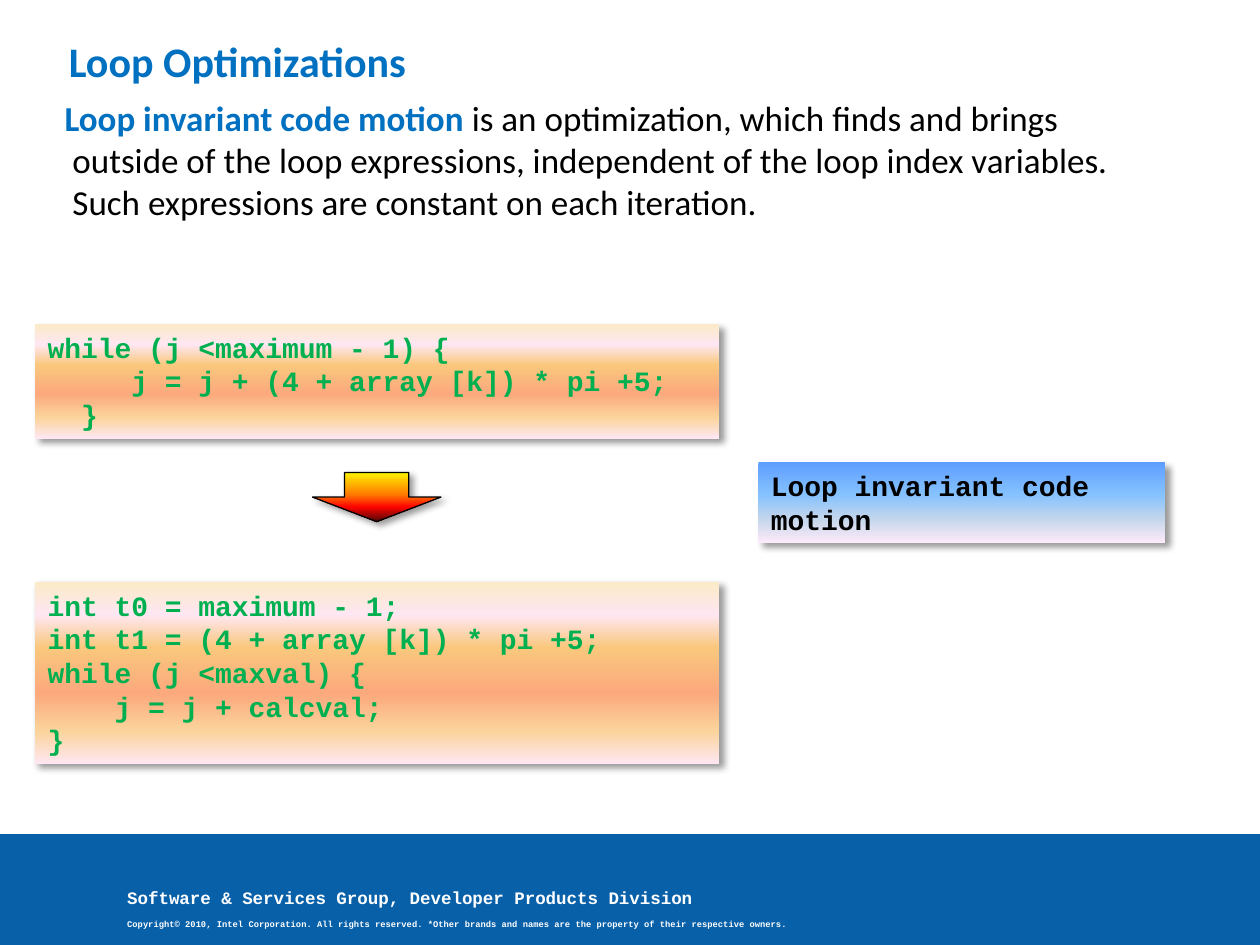
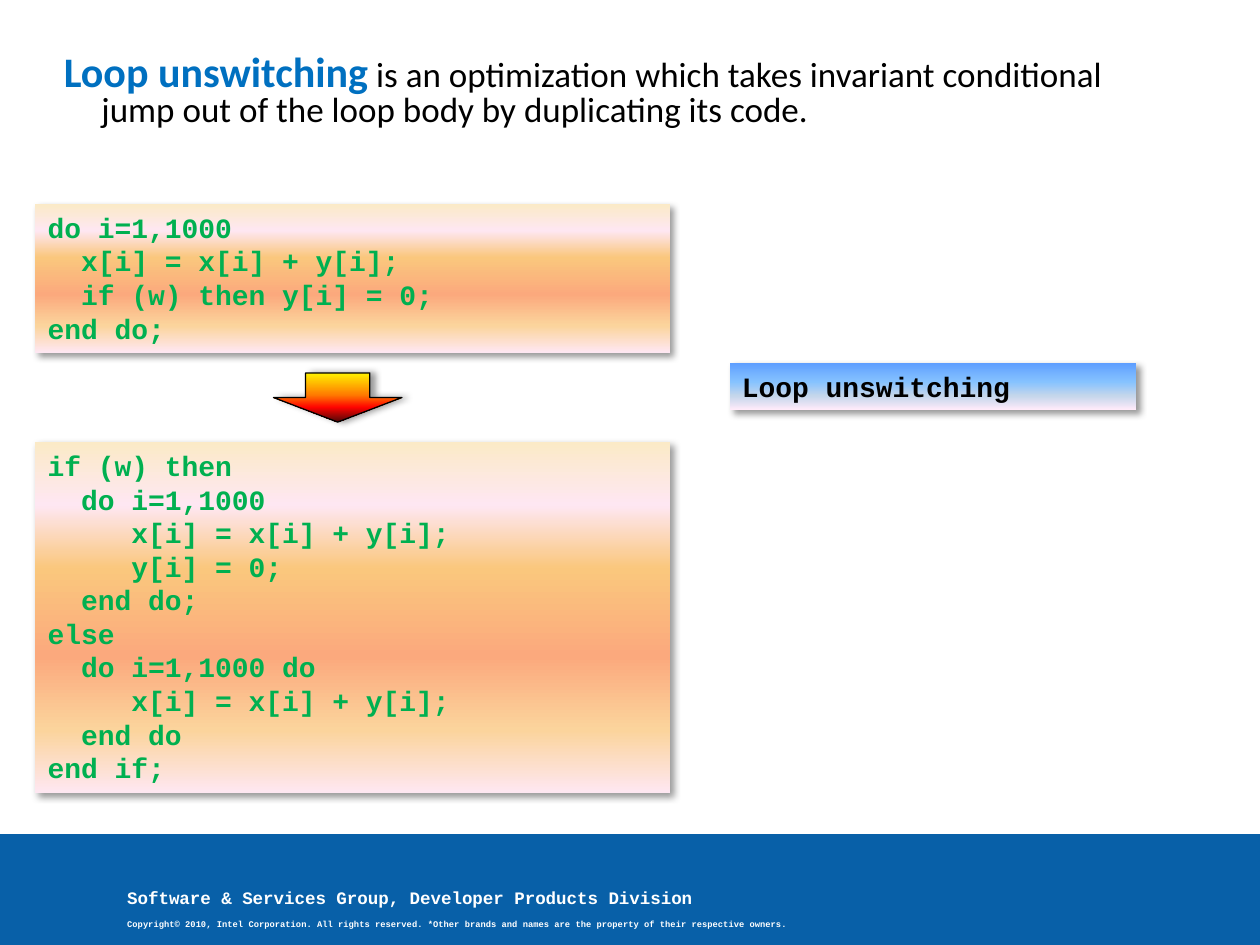
"""Builds two slides on loop optimizations, each with code before and after."""
from dataclasses import dataclass

from lxml import etree
from pptx import Presentation
from pptx.dml.color import RGBColor
from pptx.enum.shapes import MSO_SHAPE
from pptx.enum.text import MSO_ANCHOR, MSO_AUTO_SIZE, PP_ALIGN
from pptx.oxml.ns import qn
from pptx.util import Pt

RECT = MSO_SHAPE.RECTANGLE
DOWN = MSO_SHAPE.DOWN_ARROW
LEFT = PP_ALIGN.LEFT
TOP = MSO_ANCHOR.TOP
GROW = MSO_AUTO_SIZE.SHAPE_TO_FIT_TEXT
FIXED = MSO_AUTO_SIZE.NONE


@dataclass(frozen=True)
class Theme:
    sans: str = "Calibri"
    mono: str = "Courier New"
    black: str = "000000"
    white: str = "FFFFFF"
    blue: str = "0070C0"
    green: str = "00B050"
    band: str = "0860A8"
    head: float = 24
    body: float = 20
    code: float = 16
    foot: float = 10
    tiny: float = 5
    sand: tuple = ((0, "FBEAC7"), (18, "FEE7F2"), (36, "FAC77D"),
                   (61, "FBA97D"), (82, "FBD49C"), (100, "FEE7F2"))
    fire: tuple = ((0, "FFF200"), (45, "FF7A00"),
                   (70, "FF0300"), (100, "4D0808"))
    sky: tuple = ((0, "5E9EFF"), (40, "85C2FF"),
                  (70, "C4D6EB"), (100, "FFEBFA"))


class Deck:
    def __init__(self, theme):
        self.theme = theme
        self.file = Presentation()
        self.file.slide_width = Pt(720)
        self.file.slide_height = Pt(540)
        self.slide = None

    def page(self):
        self.slide = self.file.slides.add_slide(self.file.slide_layouts[6])
        self.footer()

    def shape(self, kind, left, top, width, height):
        item = self.slide.shapes.add_shape(
            kind, Pt(left), Pt(top), Pt(width), Pt(height))
        item.shadow.inherit = False
        item.line.fill.background()
        return item

    def box(self, left, top, width, height, inset=0):
        item = self.slide.shapes.add_textbox(
            Pt(left), Pt(top), Pt(width), Pt(height))
        frame = item.text_frame
        frame.word_wrap = True
        frame.auto_size = FIXED
        if not inset:
            frame.margin_left = frame.margin_right = 0
            frame.margin_top = frame.margin_bottom = 0
        return frame

    def line(self, frame, runs, space=0, pitch=None, indent=None):
        para = frame.paragraphs[0]
        if para.runs:
            para = frame.add_paragraph()
        para.alignment = LEFT
        if space:
            para.space_before = Pt(space)
        if pitch:
            para.line_spacing = pitch
        if indent:
            margin, first = indent
            props = para._p.get_or_add_pPr()
            props.set("marL", str(Pt(margin)))
            props.set("indent", str(Pt(first)))
        for text, size, face, color, bold in runs:
            run = para.add_run()
            run.text = text
            font = run.font
            font.size, font.name, font.bold = Pt(size), face, bold
            font.color.rgb = RGBColor.from_string(color)

    def glow(self, item, stops, angle=45):
        item.fill.gradient()
        item.fill.gradient_angle = 270
        props = item.element.spPr
        steps = props.find(qn("a:gradFill")).find(qn("a:gsLst"))
        steps.clear()
        for place, color in stops:
            stop = etree.SubElement(steps, qn("a:gs"), pos=str(place * 1000))
            etree.SubElement(stop, qn("a:srgbClr"), val=color)
        cast = etree.SubElement(
            props.find(qn("a:effectLst")), qn("a:outerShdw"),
            blurRad=str(Pt(4)), dist=str(Pt(3)), dir=str(angle * 60000),
            algn="tl", rotWithShape="0")
        tint = etree.SubElement(cast, qn("a:srgbClr"), val=self.theme.black)
        etree.SubElement(tint, qn("a:alpha"), val="40000")

    def panel(self, left, top, width, rows, lines, stops, color):
        item = self.shape(RECT, left, top, width, 19.3 * rows + 7.6)
        self.glow(item, stops)
        frame = item.text_frame
        frame.word_wrap = True
        frame.auto_size = GROW
        frame.vertical_anchor = TOP
        theme = self.theme
        for text in lines:
            self.line(frame, [(text, theme.code, theme.mono, color, True)])

    def code(self, top, width, text):
        lines = text.split("\n")
        self.panel(20.16, top, width, len(lines), lines,
                   self.theme.sand, self.theme.green)

    def label(self, left, top, text, rows):
        self.panel(left, top, 232.56, rows, [text],
                   self.theme.sky, self.theme.black)

    def arrow(self, left, top, angle=45):
        item = self.shape(DOWN, left, top, 73.44, 28.08)
        self.glow(item, self.theme.fire, angle)
        item.line.color.rgb = RGBColor.from_string(self.theme.black)
        item.line.width = Pt(0.75)

    def term(self, text, size):
        return text, size, self.theme.sans, self.theme.blue, True

    def plain(self, text):
        theme = self.theme
        return text, theme.body, theme.sans, theme.black, False

    def footer(self):
        theme = self.theme
        band = self.shape(RECT, 0, 476.6, 720, 63.4)
        band.fill.solid()
        band.fill.fore_color.rgb = RGBColor.from_string(theme.band)
        frame = self.box(65.6, 501.1, 430, 32.4, inset=1)
        style = theme.mono, theme.white, True
        self.line(frame, [(
            "Software & Services Group, Developer Products Division",
            theme.foot, *style)], pitch=1.2)
        self.line(frame, [(
            "Copyright© 2010, Intel Corporation. All rights reserved. "
            "*Other brands and names are the property of their respective "
            "owners.", theme.tiny, *style)], space=3.1, pitch=1.5)


MOTION = """while (j <maximum - 1) {
     j = j + (4 + array [k]) * pi +5;
  }"""

MOVED = """int t0 = maximum - 1;
int t1 = (4 + array [k]) * pi +5;
while (j <maxval) {
    j = j + calcval;
}"""

SWITCH = """do i=1,1000
  x[i] = x[i] + y[i];
  if (w) then y[i] = 0;
end do;"""

SPLIT = """if (w) then
  do i=1,1000
     x[i] = x[i] + y[i];
     y[i] = 0;
  end do;
else
  do i=1,1000 do
     x[i] = x[i] + y[i];
  end do
end if;"""


def motion(deck):
    theme = deck.theme
    deck.page()
    frame = deck.box(14.4, 20.16, 648, 141.84)
    deck.line(frame, [deck.term("Loop Optimizations", theme.head)],
              indent=(27, -2))
    deck.line(frame, [
        deck.term("Loop invariant code motion", theme.body),
        deck.plain(" is an optimization, which finds and brings outside of "
                   "the loop expressions, independent of the loop index "
                   "variables. Such expressions are constant on each "
                   "iteration.")], space=6, indent=(27, -4.5))
    deck.code(185.04, 390.96, MOTION)
    deck.code(332.64, 390.96, MOVED)
    deck.arrow(178.56, 270)
    deck.label(433.44, 264.24, "Loop invariant code motion", 2)


def switch(deck):
    deck.page()
    frame = deck.box(30.96, 31.68, 641, 62.64)
    deck.line(frame, [
        deck.term("Loop unswitching", deck.theme.head),
        deck.plain(" is an optimization which takes invariant conditional "
                   "jump out of the loop body by duplicating its code.")],
              pitch=0.8, indent=(27, -21.5))
    deck.code(116.64, 362.88, SWITCH)
    deck.code(252.72, 362.88, SPLIT)
    deck.arrow(156.24, 213.12, angle=0)
    deck.label(416.88, 207.36, "Loop unswitching", 1)


def main():
    deck = Deck(Theme())
    motion(deck)
    switch(deck)
    deck.file.save("out.pptx")


if __name__ == "__main__":
    main()
